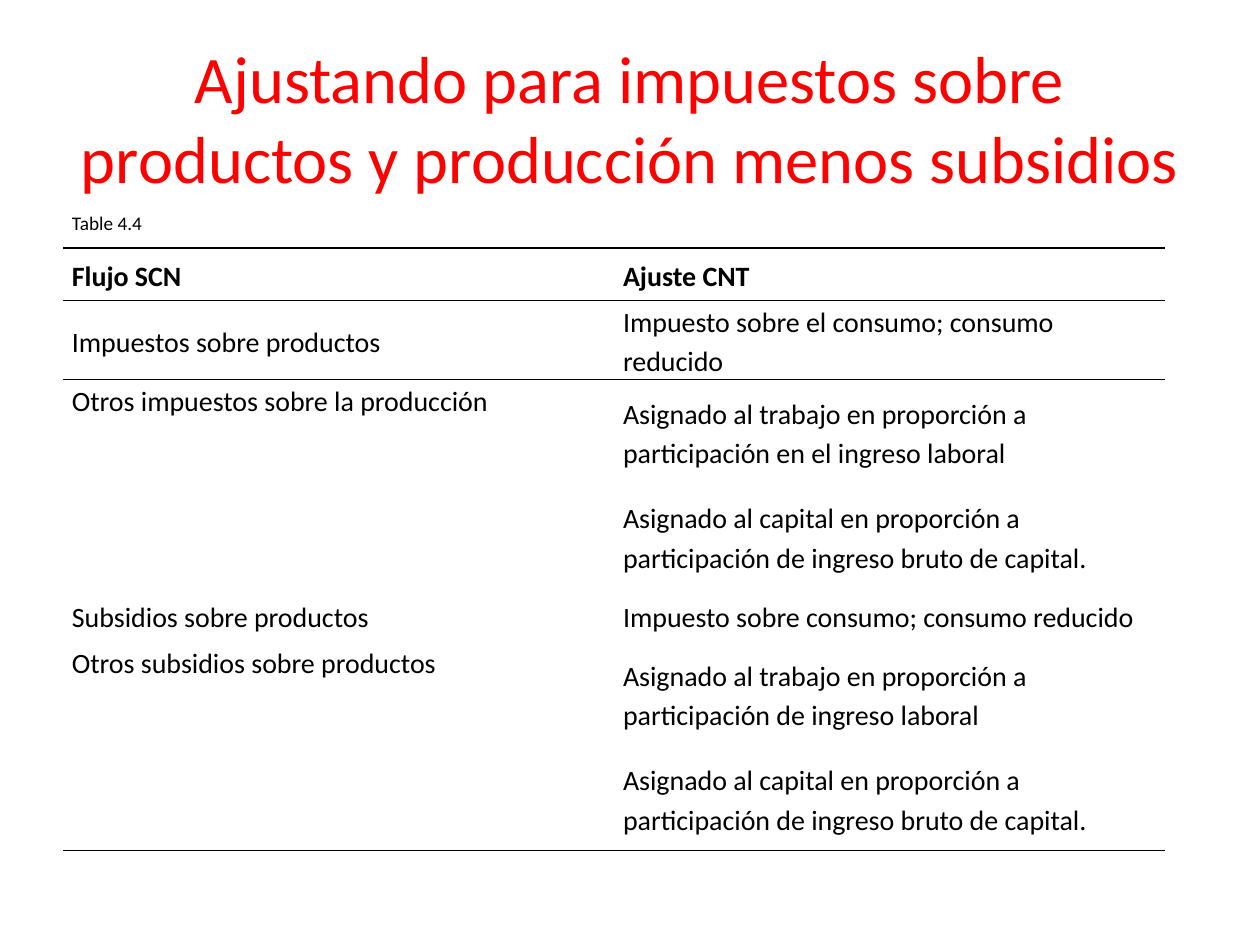
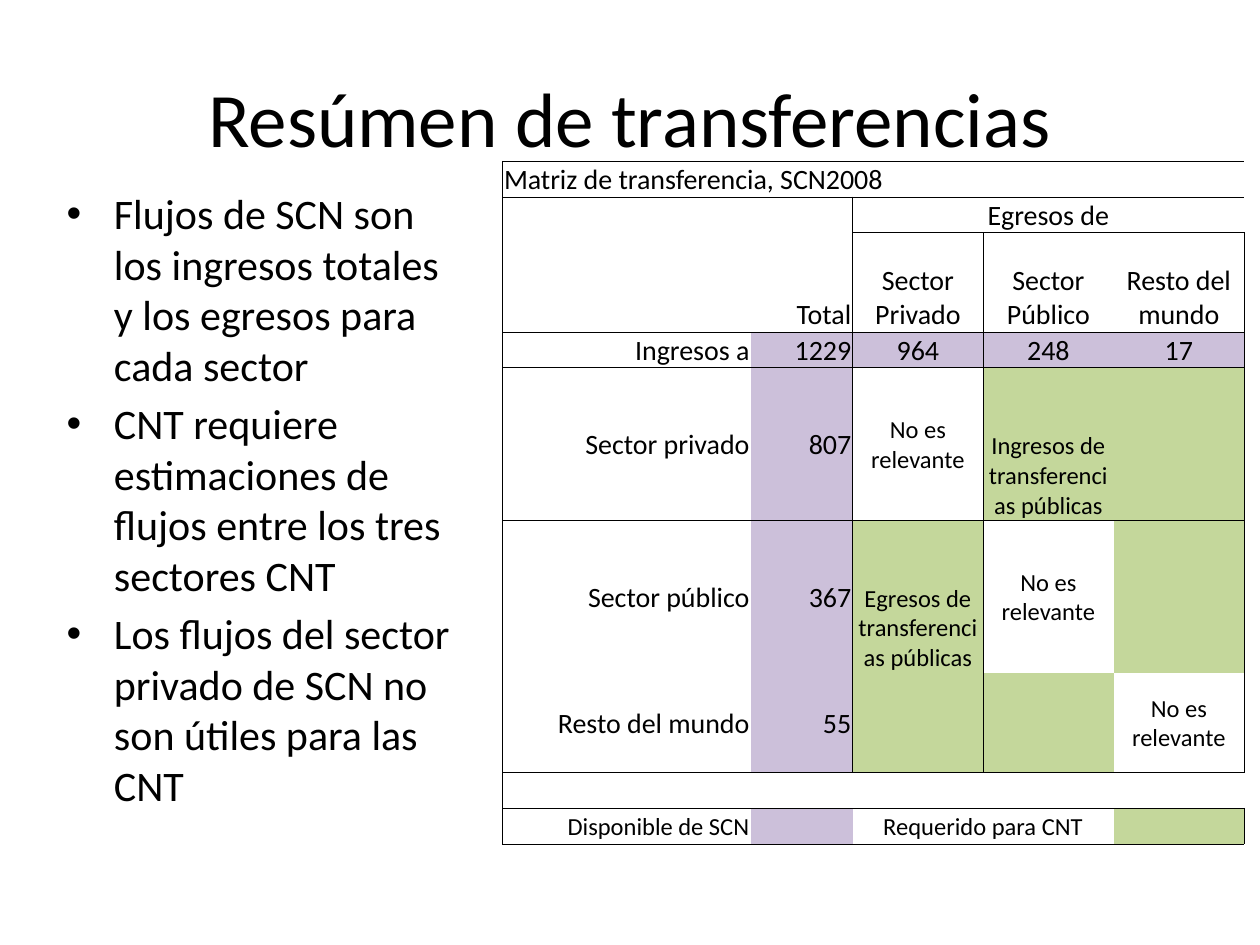
from lxml.etree import SubElement
from pptx import Presentation
from pptx.dml.color import RGBColor
from pptx.enum.text import MSO_ANCHOR, MSO_AUTO_SIZE, PP_ALIGN
from pptx.oxml.ns import qn
from pptx.util import Cm, Pt

FONT = "Calibri"
BLACK, RED, LILAC, GREEN = "000000", "FF0000", "CCC0DA", "C4D79B"
PLAIN = "{2D5ABB26-0587-4C30-8999-92F81FD0307C}"
LEFT, MID, RIGHT = PP_ALIGN.LEFT, PP_ALIGN.CENTER, PP_ALIGN.RIGHT


def set_font(para, size, color=BLACK, bold=False):
    para.font.name = FONT
    para.font.size = Pt(size)
    para.font.bold = bold
    para.font.color.rgb = RGBColor.from_string(color)


def set_cell(cell, text, pads, anchor, edges, width, fill=None):
    cell.margin_left, cell.margin_top, cell.margin_right, cell.margin_bottom = map(Cm, pads)
    cell.vertical_anchor = anchor
    props = cell._tc.get_or_add_tcPr()
    for side in "LRTB":
        if side in edges:
            line = SubElement(props, qn(f"a:ln{side}"), w=str(Pt(width)))
            paint = SubElement(line, qn("a:solidFill"))
            SubElement(paint, qn("a:srgbClr"), val=BLACK)
    if fill:
        cell.fill.solid()
        cell.fill.fore_color.rgb = RGBColor.from_string(fill)
    else:
        cell.fill.background()
    cell.text = text
    return cell.text_frame.paragraphs[0]


deck = Presentation()
deck.slide_width, deck.slide_height = Cm(25.4), Cm(19.05)

heads = [
    (5, "Ajustando para impuestos sobre productos y producción menos subsidios", 38, RED),
    (1, "Resúmen de transferencias", 44, BLACK),
]
for layout, text, size, color in heads:
    slide = deck.slides.add_slide(deck.slide_layouts[layout])
    title = slide.shapes.title
    title.left, title.top, title.width, title.height = Cm(1.27), Cm(0.76), Cm(22.86), Cm(3.18)
    title.text_frame.text = text
    title.text_frame.auto_size = MSO_AUTO_SIZE.NONE
    title.text_frame.vertical_anchor = MSO_ANCHOR.MIDDLE
    title.text_frame.paragraphs[0].alignment = MID
    set_font(title.text_frame.paragraphs[0], size, color)
taxes, flows = deck.slides

rows = [
    ("Table 4.4", ""),
    ("Flujo SCN", "Ajuste CNT"),
    ("Impuestos sobre productos", "Impuesto sobre el consumo; consumo reducido"),
    ("Otros impuestos sobre la producción",
     "Asignado al trabajo en proporción a participación en el ingreso laboral"),
    ("", "Asignado al capital en proporción a participación de ingreso bruto de capital."),
    ("Subsidios sobre productos", "Impuesto sobre consumo; consumo reducido"),
    ("Otros subsidios sobre productos",
     "Asignado al trabajo en proporción a participación de ingreso laboral"),
    ("", "Asignado al capital en proporción a participación de ingreso bruto de capital."),
]
tall = (3, 4, 6, 7)
rules = {0: "B", 1: "TB", 2: "T", 7: "B"}
frame = taxes.shapes.add_table(8, 2, Cm(1.27), Cm(3.94), Cm(22.22), Cm(12.7))
table = frame.table
table.first_row = table.horz_banding = False
table._tbl.tblPr.find(qn("a:tableStyleId")).text = PLAIN
table.cell(0, 0).merge(table.cell(0, 1))
for top in (3, 6):
    table.cell(top, 0).merge(table.cell(top + 1, 0))
for r, row in enumerate(rows):
    table.rows[r].height = Cm(2.11 if r in tall else 1.06)
    for c, text in enumerate(row):
        anchor = MSO_ANCHOR.TOP if c == 0 and r in tall else MSO_ANCHOR.MIDDLE
        edges = "B" if (r, c) == (6, 0) else rules.get(r, "")
        para = set_cell(table.cell(r, c), text, (0.18, 0, 0.18, 0), anchor, edges, 1)
        para.line_spacing = 1.15
        set_font(para, 16 if r else 11, bold=r == 1)

body = flows.placeholders[1]
body.left, body.top, body.width, body.height = Cm(1.09), Cm(3.66), Cm(8.31), Cm(12.57)
body.text_frame.auto_size = MSO_AUTO_SIZE.NONE
body.text_frame.text = "\n".join([
    "Flujos de SCN son los ingresos totales y los egresos para cada sector",
    "CNT requiere estimaciones de flujos entre los tres sectores CNT",
    "Los flujos del sector privado de SCN no son útiles para las CNT",
])
for para in body.text_frame.paragraphs:
    set_font(para, 24)
body.text_frame.paragraphs[0].space_before = Pt(0)

none = "No es relevante"
rows = [
    ("Matriz de transferencia, SCN2008", "", "", "", ""),
    ("Total", "", "Egresos de", "", ""),
    ("", "", "Sector Privado", "Sector Público", "Resto del mundo"),
    ("Ingresos a", "1229", "964", "248", "17"),
    ("Sector privado", "807", none, "Ingresos de transferencias públicas", ""),
    ("Sector público", "367", "Egresos de transferencias públicas", none, ""),
    ("Resto del mundo", "55", "", "", none),
    ("", "", "", "", ""),
    ("Disponible de SCN", "", "Requerido para CNT", "", ""),
]
fills = ["-----", "-----", "-----", "-LLLL", "-L-GG", "-LG-G", "-LGG-", "-----", "-L--G"]
shades = {"-": None, "L": LILAC, "G": GREEN}
highs = (0.72, 0.72, 2, 0.72, 3.08, 3.08, 2, 0.72, 0.72)
wides = (5.01, 2.05, 2.63, 2.63, 2.63)
frame = flows.shapes.add_table(9, 5, Cm(10.13), Cm(3.25), Cm(sum(wides)), Cm(sum(highs)))
table = frame.table
table.first_row = table.horz_banding = False
table._tbl.tblPr.find(qn("a:tableStyleId")).text = PLAIN
for c, wide in enumerate(wides):
    table.columns[c].width = Cm(wide)
for top, left, down, right in [(0, 0, 0, 4), (1, 0, 2, 1), (1, 2, 1, 4), (7, 0, 7, 4), (8, 2, 8, 3)]:
    table.cell(top, left).merge(table.cell(down, right))
for r, row in enumerate(rows):
    table.rows[r].height = Cm(highs[r])
    for c, text in enumerate(row):
        edges = ""
        if c == 0 or (c == 2 and 1 <= r <= 6):
            edges += "L"
        if c == 4 or (c == 1 and 1 <= r <= 6):
            edges += "R"
        if r in (0, 1, 4, 7, 8) or (r == 2 and c > 1):
            edges += "T"
        if r in (0, 3, 6, 7, 8) or (r == 1 and c > 1):
            edges += "B"
        low = r < 4 or "transferencias" in text
        anchor = MSO_ANCHOR.BOTTOM if low else MSO_ANCHOR.MIDDLE
        para = set_cell(table.cell(r, c), text, (0.03, 0.03, 0.03, 0), anchor, edges, 0.5,
                        shades[fills[r][c]])
        para.alignment = LEFT if r == 0 else RIGHT if c < 2 else MID
        set_font(para, 14 if r > 6 or (r > 3 and c > 1) else 16)

deck.save("out.pptx")
